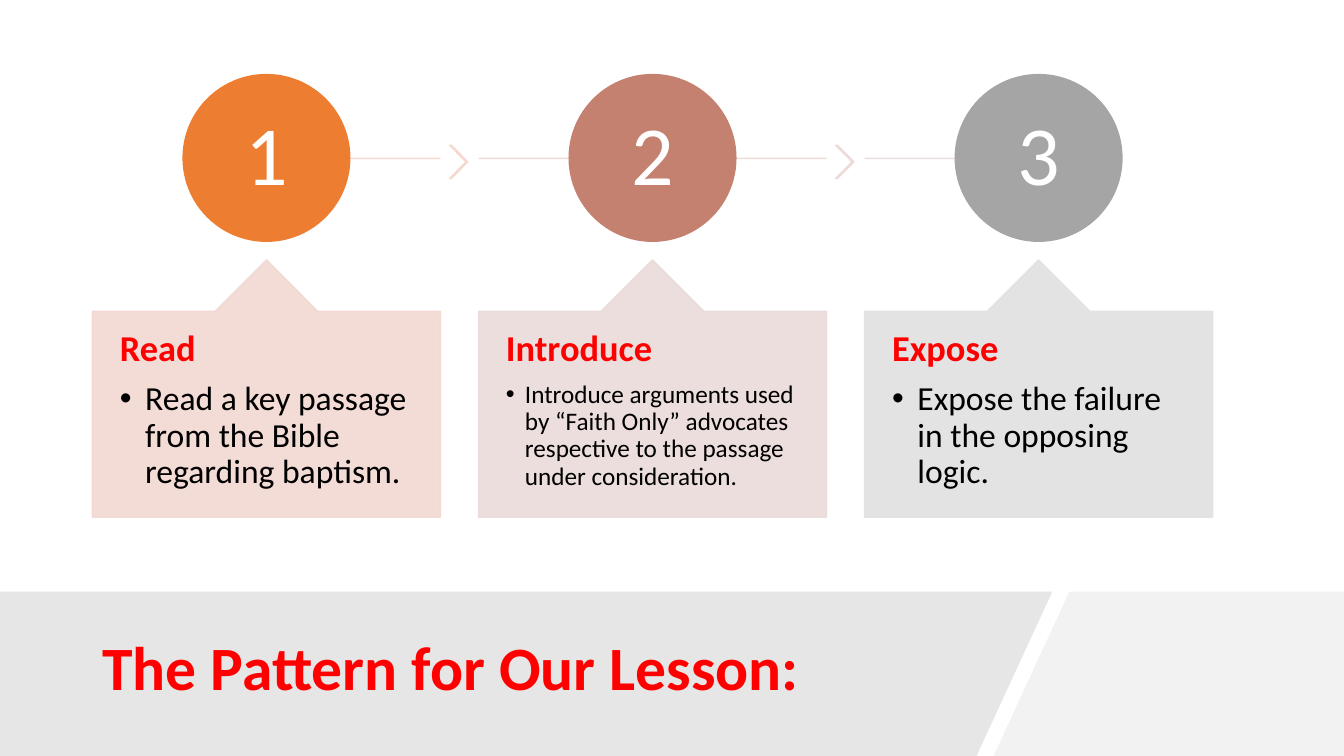
from dataclasses import dataclass

from lxml import etree
from pptx import Presentation
from pptx.dml.color import RGBColor
from pptx.enum.shapes import MSO_CONNECTOR, MSO_SHAPE
from pptx.enum.text import MSO_ANCHOR, MSO_AUTO_SIZE, PP_ALIGN
from pptx.oxml.ns import qn
from pptx.util import Cm, Pt

CIRCLE, CHEVRON, CALLOUT = MSO_SHAPE.OVAL, MSO_SHAPE.CHEVRON, MSO_SHAPE.UP_ARROW_CALLOUT
STRAIGHT = MSO_CONNECTOR.STRAIGHT
TOP, MIDDLE = MSO_ANCHOR.TOP, MSO_ANCHOR.MIDDLE
LEFT, CENTER = PP_ALIGN.LEFT, PP_ALIGN.CENTER
NO_AUTOFIT = MSO_AUTO_SIZE.NONE

FONT = "Calibri"
RED = RGBColor(0xFF, 0x00, 0x00)
BLACK = RGBColor(0x00, 0x00, 0x00)
WHITE = RGBColor(0xFF, 0xFF, 0xFF)
BAND_GRAY = RGBColor(0xE7, 0xE6, 0xE6)
CORNER_GRAY = RGBColor(0xF2, 0xF2, 0xF2)
ORANGE = RGBColor(0xED, 0x7D, 0x31)
CLAY = RGBColor(0xC4, 0x81, 0x70)
GRAY = RGBColor(0xA5, 0xA5, 0xA5)
PALE_PEACH = RGBColor(0xF2, 0xD8, 0xD2)
PALE_CLAY = RGBColor(0xEA, 0xDB, 0xD9)
PALE_GRAY = RGBColor(0xE1, 0xE1, 0xE1)
LINE_PEACH = RGBColor(0xF8, 0xD7, 0xCE)
LINE_ROSE = RGBColor(0xF0, 0xD8, 0xD4)
LINE_MAUVE = RGBColor(0xE7, 0xDC, 0xDC)
CHEVRON_PEACH = RGBColor(0xF5, 0xD7, 0xD0)
CHEVRON_ROSE = RGBColor(0xED, 0xD9, 0xD7)

# All lengths below are centimetres.
PAGE_WIDTH, PAGE_HEIGHT = 33.87, 19.05
BAND_TOP = 14.91
CARD_LEFT, CARD_PITCH, CARD_WIDTH = 2.33, 9.73, 8.77
CALLOUT_TOP, CALLOUT_HEIGHT = 6.55, 6.48
BODY_TOP, BODY_HEIGHT = 7.85, 5.18
CIRCLE_TOP, CIRCLE_SIZE = 1.88, 4.2
LINE_TOP = 3.99
OPACITY = 90


@dataclass(frozen=True)
class Step:
    heading: str
    detail: str
    detail_size: int
    indent: float
    circle_color: RGBColor
    card_color: RGBColor
    line_color: RGBColor
    chevron_color: RGBColor | None = None


STEPS = [
    Step("Read", "Read a key passage from the Bible regarding baptism.",
         24, 0.64, ORANGE, PALE_PEACH, LINE_PEACH, CHEVRON_PEACH),
    Step("Introduce",
         "Introduce arguments used by “Faith Only” advocates respective to the passage "
         "under consideration.",
         18, 0.48, CLAY, PALE_CLAY, LINE_ROSE, CHEVRON_ROSE),
    Step("Expose", "Expose the failure in the opposing logic.",
         24, 0.64, GRAY, PALE_GRAY, LINE_MAUVE),
]


def make_translucent(shape) -> None:
    for color in shape._element.spPr.iter(qn("a:srgbClr")):
        etree.SubElement(color, qn("a:alpha"), val=str(OPACITY * 1000))


def add_outlined_shape(page, kind, left: float, top: float, width: float, height: float,
                       color: RGBColor):
    shape = page.shapes.add_shape(kind, Cm(left), Cm(top), Cm(width), Cm(height))
    shape.shadow.inherit = False
    shape.fill.solid()
    shape.fill.fore_color.rgb = color
    shape.line.color.rgb = color
    shape.line.width = Pt(1)
    return shape


def add_polygon(page, points: list[tuple[float, float]], color: RGBColor) -> None:
    start, *others = [(Cm(x), Cm(y)) for x, y in points]
    builder = page.shapes.build_freeform(*start)
    builder.add_line_segments(others)
    polygon = builder.convert_to_shape()
    polygon.shadow.inherit = False
    polygon.fill.solid()
    polygon.fill.fore_color.rgb = color
    polygon.line.fill.background()


def add_track(page, start: float, end: float, color: RGBColor) -> None:
    """Draw one stretch of the line that runs behind the circles."""
    track = page.shapes.add_connector(STRAIGHT, Cm(start), Cm(LINE_TOP), Cm(end), Cm(LINE_TOP))
    track.line.color.rgb = color
    track.line.width = Pt(1)
    make_translucent(track)
    etree.SubElement(track._element.spPr, qn("a:effectLst"))


def format_para(para, size: int, color: RGBColor, bold: bool = False, align=LEFT,
                after: int = 0) -> None:
    para.alignment = align
    para.line_spacing = 0.9
    para.space_before = Pt(0)
    para.space_after = Pt(after)
    for span in para.runs:
        span.font.name = FONT
        span.font.size = Pt(size)
        span.font.bold = bold
        span.font.color.rgb = color


def set_bullet(para, indent: float, bullet: str = "") -> None:
    properties = para._p.get_or_add_pPr()
    properties.set("marL", str(Cm(indent)))
    properties.set("indent", str(-Cm(indent)))
    if bullet:
        etree.SubElement(properties, qn("a:buFont"), typeface="Arial")
        etree.SubElement(properties, qn("a:buChar"), char=bullet)
    else:
        etree.SubElement(properties, qn("a:buNone"))


def place_in_front(page, box, left: float, top: float, width: float, height: float) -> None:
    box.left, box.top, box.width, box.height = Cm(left), Cm(top), Cm(width), Cm(height)
    page.shapes._spTree.append(box._element)


def set_frame(frame, anchor, side: float, end: float) -> None:
    frame.word_wrap = True
    frame.auto_size = NO_AUTOFIT
    frame.vertical_anchor = anchor
    frame.margin_left = frame.margin_right = Cm(side)
    frame.margin_top = frame.margin_bottom = Cm(end)


def add_step(page, body, number: int, step: Step) -> None:
    left = CARD_LEFT + (number - 1) * CARD_PITCH
    right = left + CARD_WIDTH
    center = left + CARD_WIDTH / 2
    add_track(page, center if number == 1 else left,
              center if number == len(STEPS) else right, step.line_color)
    if step.chevron_color is not None:
        chevron = add_outlined_shape(page, CHEVRON, right + 0.23, 3.66, 0.46, 0.84,
                                     step.chevron_color)
        chevron.adjustments[0] = 0.9
        make_translucent(chevron)

    circle = add_outlined_shape(page, CIRCLE, center - CIRCLE_SIZE / 2, CIRCLE_TOP,
                                CIRCLE_SIZE, CIRCLE_SIZE, step.circle_color)
    set_frame(circle.text_frame, MIDDLE, 0.15, 0.15)
    circle.text_frame.text = str(number)
    format_para(circle.text_frame.paragraphs[0], 60, WHITE, align=CENTER)

    callout = add_outlined_shape(page, CALLOUT, left, CALLOUT_TOP, CARD_WIDTH, CALLOUT_HEIGHT,
                                 step.card_color)
    for index, value in enumerate((0.5, 0.2, 0.2, 1)):
        callout.adjustments[index] = value
    make_translucent(callout)

    place_in_front(page, body, left, BODY_TOP, CARD_WIDTH, BODY_HEIGHT)
    set_frame(body.text_frame, TOP, 0.69, 0.46)
    body.text_frame.text = f"{step.heading}\n{step.detail}"
    heading, detail = body.text_frame.paragraphs
    format_para(heading, 26, RED, bold=True, after=9)
    set_bullet(heading, 0)
    format_para(detail, step.detail_size, BLACK)
    set_bullet(detail, step.indent, "•")


def main() -> None:
    deck = Presentation()
    deck.slide_width, deck.slide_height = Cm(PAGE_WIDTH), Cm(PAGE_HEIGHT)
    page = deck.slides.add_slide(deck.slide_layouts.get_by_name("Comparison"))
    title, *bodies = page.placeholders
    for spare in bodies[len(STEPS):]:
        page.shapes._spTree.remove(spare._element)

    add_polygon(page, [(26.95, BAND_TOP), (PAGE_WIDTH, BAND_TOP), (PAGE_WIDTH, PAGE_HEIGHT),
                       (25.04, PAGE_HEIGHT)], CORNER_GRAY)
    add_polygon(page, [(0, BAND_TOP), (26.52, BAND_TOP), (24.61, PAGE_HEIGHT),
                       (0, PAGE_HEIGHT)], BAND_GRAY)
    place_in_front(page, title, 2.33, 15.37, 22.43, 3.05)
    set_frame(title.text_frame, MIDDLE, 0.25, 0.13)
    title.text_frame.text = "The Pattern for Our Lesson:"
    format_para(title.text_frame.paragraphs[0], 44, RED, bold=True)

    for number, (body, step) in enumerate(zip(bodies, STEPS), start=1):
        add_step(page, body, number, step)
    deck.save("out.pptx")


if __name__ == "__main__":
    main()
